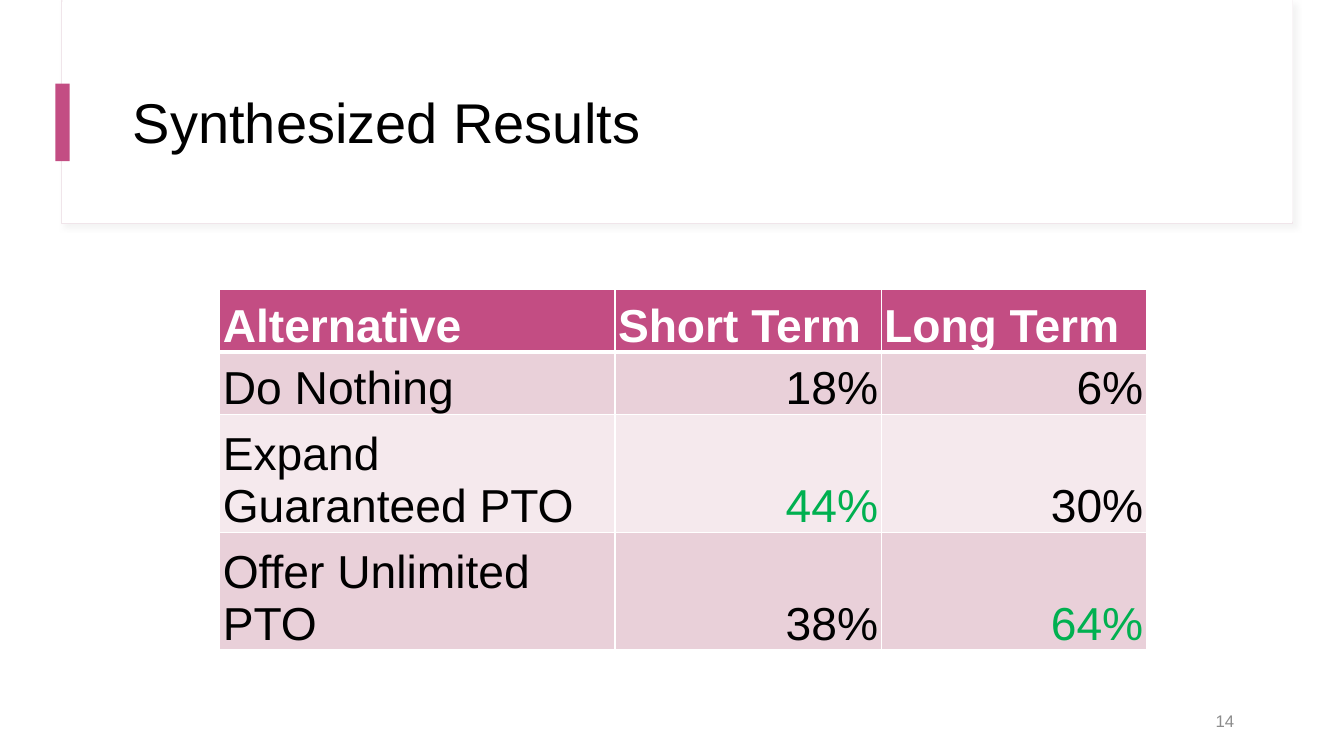
from lxml import etree
from pptx import Presentation, util as u
from pptx.dml.color import RGBColor
from pptx.enum import shapes, text
from pptx.oxml import ns

WIDTH, HEIGHT = 13.33, 7.5
FONT = "Arial"
WHITE, BLACK, GREY = "FFFFFF", "000000", "8C8C8C"
PINK, PALE_PINK, FAINT_PINK = "C34D83", "E9D0D9", "F5E9ED"
BORDER_PINK, SHADOW_GREY, GREEN = "F0E5EA", "D9D9D9", "00B050"

COLUMN_WIDTHS = [3.92, 2.64, 2.63]
ROW_HEIGHTS = [0.62, 0.62, 1.17, 1.17]
RESULTS = [
    ("Alternative", "Short Term", "Long Term"),
    ("Do Nothing", "18%", "6%"),
    ("Expand Guaranteed PTO", "44%", "30%"),
    ("Offer Unlimited PTO", "38%", "64%"),
]
BEST_RESULTS = {(2, 1), (3, 2)}


def color(value):
    return RGBColor.from_string(value)


def add_element(parent, tag, **attributes):
    element = etree.SubElement(parent, ns.qn(tag))
    for name, value in attributes.items():
        element.set(name, str(value))
    return element


def add_run(paragraph, words, size, font_color, bold=False):
    run = paragraph.add_run()
    run.text = words
    run.font.name = FONT
    run.font.size = u.Pt(size)
    run.font.bold = bold
    run.font.color.rgb = color(font_color)


def add_text(slide, box, words, size, font_color, align=text.PP_ALIGN.LEFT):
    frame = slide.shapes.add_textbox(*map(u.Inches, box)).text_frame
    frame.word_wrap = True
    frame.vertical_anchor = text.MSO_ANCHOR.MIDDLE
    paragraph = frame.paragraphs[0]
    paragraph.alignment = align
    add_run(paragraph, words, size, font_color)
    return paragraph


def add_rectangle(slide, box, fill, line=None):
    shape = slide.shapes.add_shape(
        shapes.MSO_SHAPE.RECTANGLE, *map(u.Inches, box))
    shape.shadow.inherit = False
    shape.fill.solid()
    shape.fill.fore_color.rgb = color(fill)
    if line:
        shape.line.color.rgb = color(line)
        shape.line.width = u.Pt(0.75)
    else:
        shape.line.fill.background()
    return shape


def add_soft_shadow(shape):
    effects = shape._element.spPr.find(ns.qn("a:effectLst"))
    shadow = add_element(effects, "a:outerShdw", blurRad=u.Pt(4),
                         dist=u.Pt(3), dir=45 * 60000, algn="tl",
                         rotWithShape=0)
    tint = add_element(shadow, "a:srgbClr", val=SHADOW_GREY)
    add_element(tint, "a:alpha", val=30000)


def add_title_card(slide, box):
    left, top, width, height = box
    # Bordered card with a plain face
    add_soft_shadow(add_rectangle(slide, box, WHITE, BORDER_PINK))
    add_rectangle(slide, (left + 0.01, top - 0.01, width - 0.01, height - 0.01),
                  WHITE)
    # Title and accent bar
    title = add_text(slide, (left + 0.61, top + 0.59, width - 1.09, 1.29),
                     "Synthesized Results", 40, BLACK)
    title.line_spacing = 0.9
    add_rectangle(slide, (left - 0.06, top + 0.82, 0.14, 0.77), PINK)


def set_borders(cell, row):
    properties = cell._tc.get_or_add_tcPr()
    widths = {"L": 1, "R": 1, "T": 3 if row == 1 else 1,
              "B": 3 if row == 0 else 1}
    for side, width in widths.items():
        line = add_element(properties, f"a:ln{side}", w=u.Pt(width))
        add_element(add_element(line, "a:solidFill"), "a:srgbClr", val=WHITE)


def fill_cell(cell, row, column):
    header = row == 0
    cell.margin_left = cell.margin_right = cell.margin_top = u.Inches(0.03)
    cell.margin_bottom = 0
    cell.vertical_anchor = text.MSO_ANCHOR.BOTTOM
    set_borders(cell, row)
    cell.fill.solid()
    band = PALE_PINK if row % 2 else FAINT_PINK
    cell.fill.fore_color.rgb = color(PINK if header else band)
    paragraph = cell.text_frame.paragraphs[0]
    if not header and column > 0:
        paragraph.alignment = text.PP_ALIGN.RIGHT
    body_color = GREEN if (row, column) in BEST_RESULTS else BLACK
    add_run(paragraph, RESULTS[row][column], 33,
            WHITE if header else body_color, header)


def add_results_table(slide, left, top):
    box = (left, top, sum(COLUMN_WIDTHS), sum(ROW_HEIGHTS))
    table = slide.shapes.add_table(
        len(ROW_HEIGHTS), len(COLUMN_WIDTHS), *map(u.Inches, box)).table
    for column, width in zip(table.columns, COLUMN_WIDTHS):
        column.width = u.Inches(width)
    for row, height in zip(table.rows, ROW_HEIGHTS):
        row.height = u.Inches(height)
    for row in range(len(ROW_HEIGHTS)):
        for column in range(len(COLUMN_WIDTHS)):
            fill_cell(table.cell(row, column), row, column)


def add_results_slide(presentation):
    slide = presentation.slides.add_slide(presentation.slide_layouts[6])
    slide.background.fill.solid()
    slide.background.fill.fore_color.rgb = color(WHITE)
    add_title_card(slide, (0.61, 0.01, 12.21, 2.21))
    add_results_table(slide, 2.18, 2.87)
    # Page number
    add_text(slide, (WIDTH - 3.99, HEIGHT - 0.55, 3, 0.4), "14", 12, GREY,
             text.PP_ALIGN.RIGHT)


def main():
    presentation = Presentation()
    presentation.slide_width = u.Inches(WIDTH)
    presentation.slide_height = u.Inches(HEIGHT)
    add_results_slide(presentation)
    presentation.save("out.pptx")


if __name__ == "__main__":
    main()
